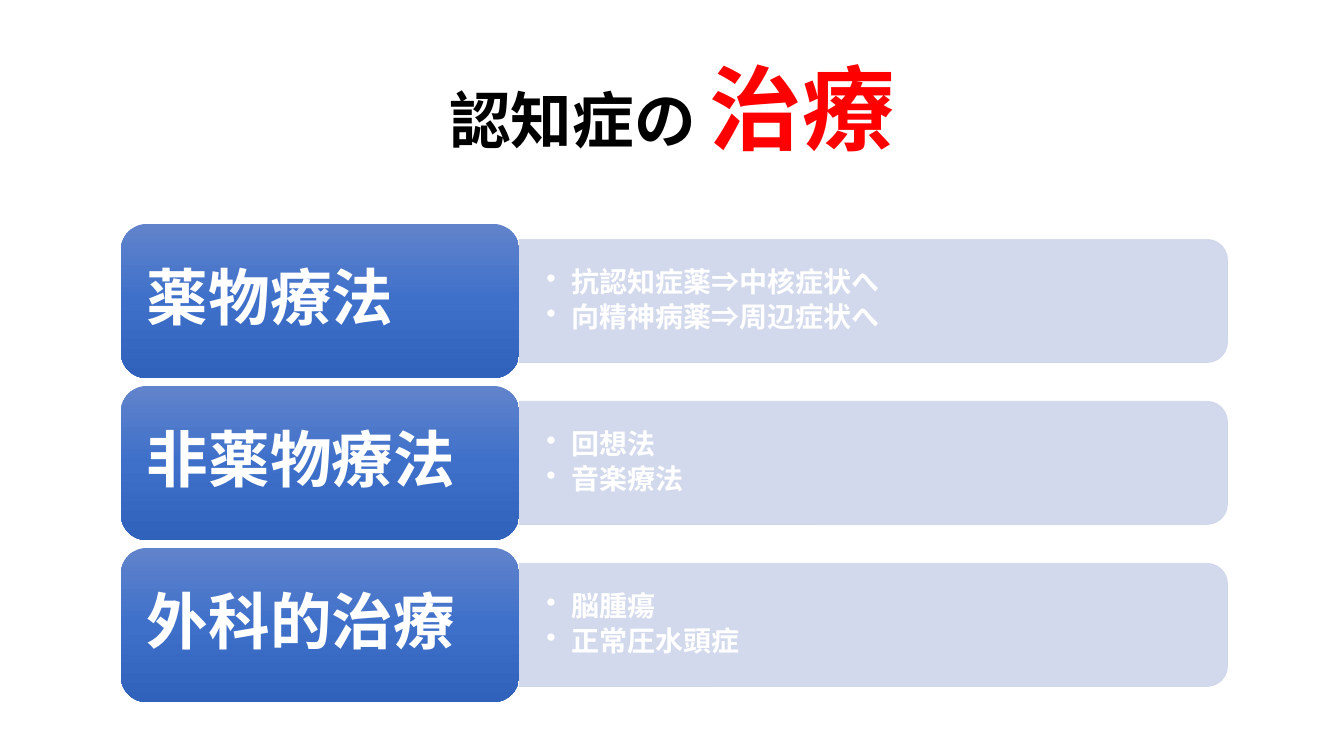
from lxml import etree
from pptx import Presentation
from pptx.dml.color import RGBColor
from pptx.enum.shapes import MSO_SHAPE
from pptx.enum.text import MSO_ANCHOR, PP_ALIGN
from pptx.oxml.ns import qn
from pptx.util import Pt

CARD = MSO_SHAPE.ROUNDED_RECTANGLE
BAR = MSO_SHAPE.ROUND_2_SAME_RECTANGLE
MIDDLE = MSO_ANCHOR.MIDDLE
LEFT = PP_ALIGN.LEFT
CENTER = PP_ALIGN.CENTER

TREATMENTS = [
    ("薬物療法", ["抗認知症薬⇒中核症状へ", "向精神病薬⇒周辺症状へ"]),
    ("非薬物療法", ["回想法", "音楽療法"]),
    ("外科的治療", ["脳腫瘍", "正常圧水頭症"]),
]
FIRST_TOP, ROW_PITCH = 160, 115.7
CARD_LEFT, CARD_WIDTH, CARD_HEIGHT = 86.4, 284.4, 110
BAR_LENGTH, BAR_HEIGHT = 506, 88
DETAIL_WIDTH, DETAIL_HEIGHT = 502, 80


def color(hex_value):
    return RGBColor.from_string(hex_value)


def apply(target, values):
    for name, value in values.items():
        setattr(target, name, value)


class TreatmentSlide:
    font = "Cabin"
    white = "FFFFFF"
    bar_color = "CFD5EA"
    gradient = [(0, "6183CB"), (50, "3E70CA"), (100, "3062BB")]

    def __init__(self, slide):
        self.shapes = slide.shapes

    def frame(self, shape, inset_x, inset_y):
        frame = shape.text_frame
        apply(frame, {
            "word_wrap": True, "vertical_anchor": MIDDLE,
            "margin_left": Pt(inset_x), "margin_right": Pt(inset_x),
            "margin_top": Pt(inset_y), "margin_bottom": Pt(inset_y),
        })
        return frame

    def paragraph(self, paragraph, runs, **layout):
        apply(paragraph, {"line_spacing": 0.9, "alignment": LEFT, **layout})
        for text, size, hex_value in runs:
            run = paragraph.add_run()
            run.text = text
            apply(run.font, {"name": self.font, "size": Pt(size), "bold": True})
            run.font.color.rgb = color(hex_value)
            etree.SubElement(run.font._element, qn("a:ea"), typeface=self.font)

    def title(self, runs):
        box = self.shapes.add_textbox(Pt(66), Pt(28.8), Pt(828), Pt(104.4))
        frame = self.frame(box, 7.2, 3.6)
        self.paragraph(frame.paragraphs[0], runs, alignment=CENTER)

    def bar(self, left, middle):
        bar = self.shapes.add_shape(
            BAR, Pt(left + (BAR_LENGTH - BAR_HEIGHT) / 2),
            Pt(middle - BAR_LENGTH / 2), Pt(BAR_HEIGHT), Pt(BAR_LENGTH))
        bar.rotation = 90
        bar.shadow.inherit = False
        bar.line.width = Pt(0.5)
        for fill in (bar.fill, bar.line.fill):
            fill.solid()
            fill.fore_color.rgb = color(self.bar_color)
        for tint in bar._element.spPr.iter(qn("a:srgbClr")):
            etree.SubElement(tint, qn("a:alpha"), val="90000")

    def details(self, left, middle, items):
        box = self.shapes.add_textbox(
            Pt(left), Pt(middle - DETAIL_HEIGHT / 2),
            Pt(DETAIL_WIDTH), Pt(DETAIL_HEIGHT))
        frame = self.frame(box, 19.4, 9.7)
        for index, item in enumerate(items):
            paragraph = frame.add_paragraph() if index else frame.paragraphs[0]
            self.paragraph(paragraph, [(item, 20, self.white)],
                           level=1, space_after=Pt(3))
            properties = paragraph._p.get_or_add_pPr()
            properties.set("marL", str(Pt(18)))
            properties.set("indent", str(Pt(-18)))
            etree.SubElement(properties, qn("a:buChar"), char="•")

    def card(self, top, label):
        card = self.shapes.add_shape(
            CARD, Pt(CARD_LEFT), Pt(top), Pt(CARD_WIDTH), Pt(CARD_HEIGHT))
        card.shadow.inherit = False
        card.line.fill.background()
        card.fill.gradient()
        card.fill.gradient_angle = 270
        stops = card._element.spPr.find(qn("a:gradFill")).find(qn("a:gsLst"))
        for stop in list(stops):
            stops.remove(stop)
        for position, hex_value in self.gradient:
            stop = etree.SubElement(stops, qn("a:gs"), pos=str(position * 1000))
            etree.SubElement(stop, qn("a:srgbClr"), val=hex_value)
        frame = self.frame(card, 13.2, 6.6)
        self.paragraph(frame.paragraphs[0], [(label, 44, self.white)])


def main():
    deck = Presentation()
    deck.slide_width, deck.slide_height = Pt(960), Pt(540)
    page = TreatmentSlide(deck.slides.add_slide(deck.slide_layouts[6]))
    page.title([("認知症の ", 44, "000000"), ("治療", 66, "FF0000")])
    detail_left = CARD_LEFT + CARD_WIDTH
    for row, (label, items) in enumerate(TREATMENTS):
        top = FIRST_TOP + row * ROW_PITCH
        middle = top + CARD_HEIGHT / 2
        page.bar(detail_left, middle)
        page.details(detail_left, middle, items)
        page.card(top, label)
    deck.save("out.pptx")


if __name__ == "__main__":
    main()
